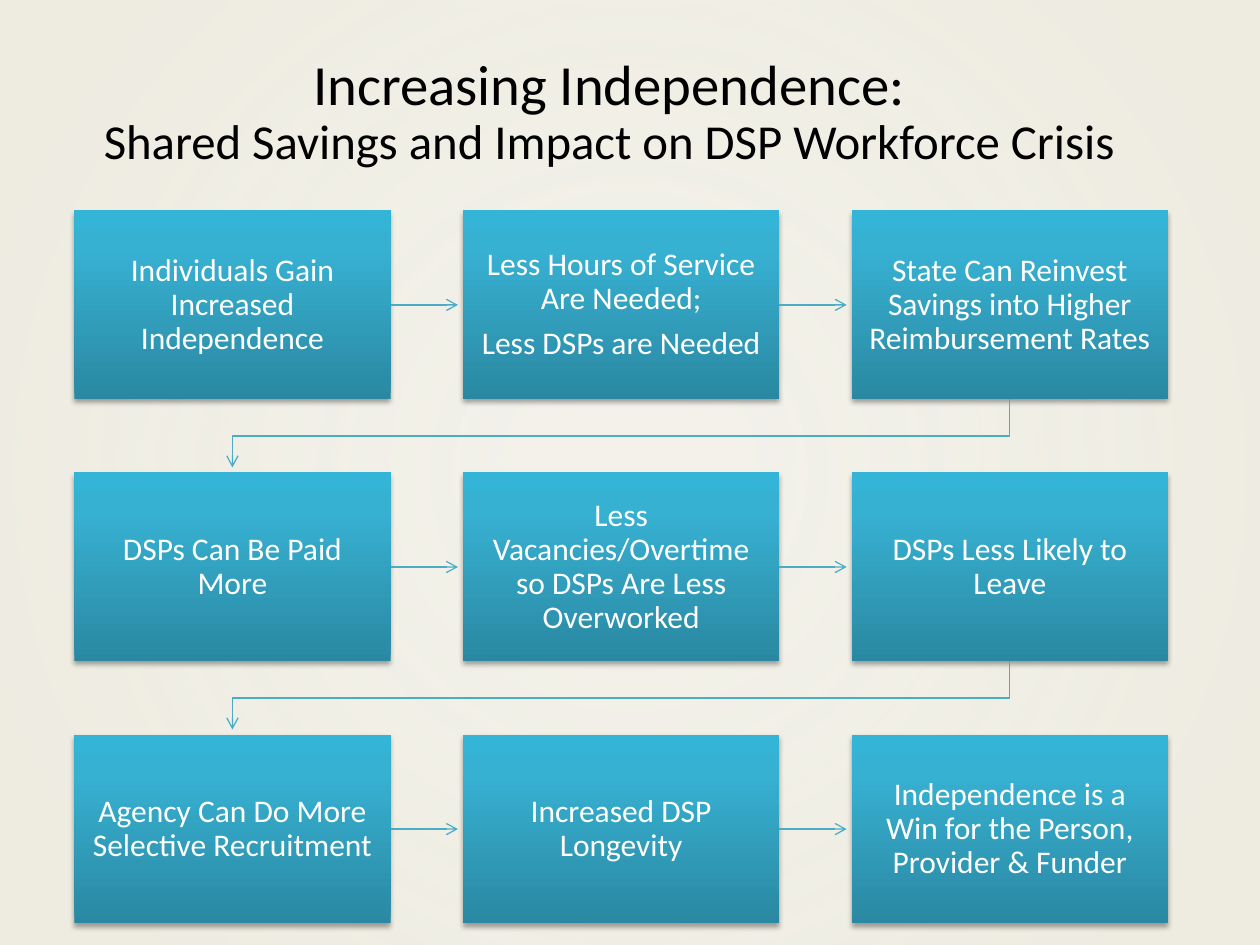
from lxml import etree
from pptx import Presentation
from pptx import util as u
from pptx.dml.color import RGBColor
from pptx.enum import shapes, text
from pptx.oxml.ns import nsdecls, qn

TITLE = [("Increasing Independence:", 32.4),
         ("Shared Savings and Impact on DSP Workforce Crisis", 27.9)]
STEPS = [
    [["Individuals Gain Increased Independence"],
     ["Less Hours of Service Are Needed;", "Less DSPs are Needed"],
     ["State Can Reinvest Savings into Higher Reimbursement Rates"]],
    [["DSPs Can Be Paid More"],
     ["Less Vacancies/Overtime so DSPs Are Less Overworked"],
     ["DSPs Less Likely to Leave"]],
    [["Agency Can Do More Selective Recruitment"],
     ["Increased DSP Longevity"],
     ["Independence is a Win for the Person, Provider & Funder"]],
]

THEME = {
    "font": "Calibri", "step_size": 18, "title_color": "000000",
    "step_color": "FFFFFF", "arrow": "4BACC6", "shadow": "000000",
    "step_fill": [(0, "2A88A2", 100), (80, "37B1D2", 100), (100, "34B4D6", 100)],
    "backdrop_fill": [(10, "EEECE1", 68), (85, "EEECE1", 97)],
}
LINEAR = '<a:lin ang="16200000" scaled="0"/>'
CIRCLE = ('<a:path path="circle"><a:fillToRect l="50000" t="50000" '
          'r="50000" b="50000"/></a:path>')

WIDTH, HEIGHT = 2.51, 1.5
LEFT, TOP = 0.59, 1.67
COLUMN_PITCH, ROW_PITCH = (6.76 - LEFT) / 2, 2.08
ARROW_GAP, ELBOW_DROP = 0.04, 0.29


def fill_gradient(shape, stops, direction):
    stop_xml = "".join(
        f'<a:gs pos="{position * 1000}"><a:srgbClr val="{color}">'
        f'<a:alpha val="{alpha * 1000}"/></a:srgbClr></a:gs>'
        for position, color, alpha in stops)
    gradient = etree.fromstring(
        f'<a:gradFill {nsdecls("a")} rotWithShape="1">'
        f'<a:gsLst>{stop_xml}</a:gsLst>{direction}</a:gradFill>')
    shape.fill.background()
    properties = shape.element.spPr
    properties.replace(properties.find(qn("a:noFill")), gradient)


def add_rectangle(slide, left, top, width, height, stops, direction):
    shape = slide.shapes.add_shape(
        shapes.MSO_SHAPE.RECTANGLE,
        *(u.Inches(value) for value in (left, top, width, height)))
    fill_gradient(shape, stops, direction)
    shape.line.fill.background()
    shape.shadow.inherit = False
    return shape


def cast_shadow(shape):
    effects = shape.element.spPr.find(qn("a:effectLst"))
    effects.append(etree.fromstring(
        f'<a:outerShdw {nsdecls("a")} blurRad="{u.Pt(3.1)}" dist="{u.Pt(1.8)}" '
        f'dir="5400000" rotWithShape="0"><a:srgbClr val="{THEME["shadow"]}">'
        '<a:alpha val="35000"/></a:srgbClr></a:outerShdw>'))


def write_text(paragraph, content, *, size, color, space_after=0):
    paragraph.text = content
    paragraph.alignment = text.PP_ALIGN.CENTER
    paragraph.line_spacing = 0.9
    paragraph.space_before = u.Pt(0)
    paragraph.space_after = u.Pt(space_after)
    paragraph.font.name = THEME["font"]
    paragraph.font.size = u.Pt(size)
    paragraph.font.color.rgb = RGBColor.from_string(color)


def set_frame(frame, left, top, right, bottom):
    frame.word_wrap = True
    frame.vertical_anchor = text.MSO_ANCHOR.MIDDLE
    frame.margin_left, frame.margin_top = u.Inches(left), u.Inches(top)
    frame.margin_right, frame.margin_bottom = u.Inches(right), u.Inches(bottom)


def paragraphs_for(frame, items):
    for index, item in enumerate(items):
        yield (frame.add_paragraph() if index else frame.paragraphs[0]), item


def style_arrow(shape):
    shape.line.color.rgb = RGBColor.from_string(THEME["arrow"])
    shape.line.width = u.Pt(0.75)
    properties = shape.element.spPr
    etree.SubElement(properties.find(qn("a:ln")), qn("a:tailEnd"), type="arrow")
    if properties.find(qn("a:effectLst")) is None:
        etree.SubElement(properties, qn("a:effectLst"))


def add_title(slide):
    title = slide.shapes.title
    title.left, title.top = u.Inches(0.17), u.Inches(0.17)
    title.width, title.height = u.Inches(9.33), u.Inches(1.68)
    set_frame(title.text_frame, 0.1, 0.05, 0.1, 0.27)
    for paragraph, (content, size) in paragraphs_for(title.text_frame, TITLE):
        write_text(paragraph, content, size=size, color=THEME["title_color"])


def add_step(slide, row, column, lines):
    step = add_rectangle(slide, LEFT + column * COLUMN_PITCH, TOP + row * ROW_PITCH,
                         WIDTH, HEIGHT, THEME["step_fill"], LINEAR)
    cast_shadow(step)
    set_frame(step.text_frame, 0.12, 0.13, 0.12, 0.13)
    for paragraph, content in paragraphs_for(step.text_frame, lines):
        write_text(paragraph, content, size=THEME["step_size"],
                   color=THEME["step_color"], space_after=6.3)
    return step


def add_straight_arrow(slide, source, target):
    middle = source.top + source.height // 2
    arrow = slide.shapes.add_connector(
        shapes.MSO_CONNECTOR.STRAIGHT, source.left + source.width, middle,
        target.left - u.Inches(ARROW_GAP), middle)
    arrow.begin_connect(source, 3)
    style_arrow(arrow)


def add_return_arrow(slide, source, target):
    start_x = source.left + source.width // 2
    end_x = target.left + target.width // 2
    start_y = source.top + source.height
    turn_y = start_y + u.Inches(ELBOW_DROP)
    end_y = target.top - u.Inches(ARROW_GAP)
    builder = slide.shapes.build_freeform(start_x, start_y)
    builder.add_line_segments(
        [(start_x, turn_y), (end_x, turn_y), (end_x, end_y)], close=False)
    arrow = builder.convert_to_shape()
    arrow.fill.background()
    style_arrow(arrow)


def main():
    presentation = Presentation()
    presentation.slide_width, presentation.slide_height = u.Inches(10), u.Inches(7.5)
    slide = presentation.slides.add_slide(presentation.slide_layouts[5])
    backdrop = add_rectangle(slide, 0, 0, 10, 7.5, THEME["backdrop_fill"], CIRCLE)
    slide.shapes.title.element.addprevious(backdrop.element)
    add_title(slide)

    grid = [[add_step(slide, row, column, lines) for column, lines in enumerate(steps)]
            for row, steps in enumerate(STEPS)]
    for steps in grid:
        for source, target in zip(steps, steps[1:]):
            add_straight_arrow(slide, source, target)
    for upper, lower in zip(grid, grid[1:]):
        add_return_arrow(slide, upper[-1], lower[0])
    presentation.save("out.pptx")


if __name__ == "__main__":
    main()
